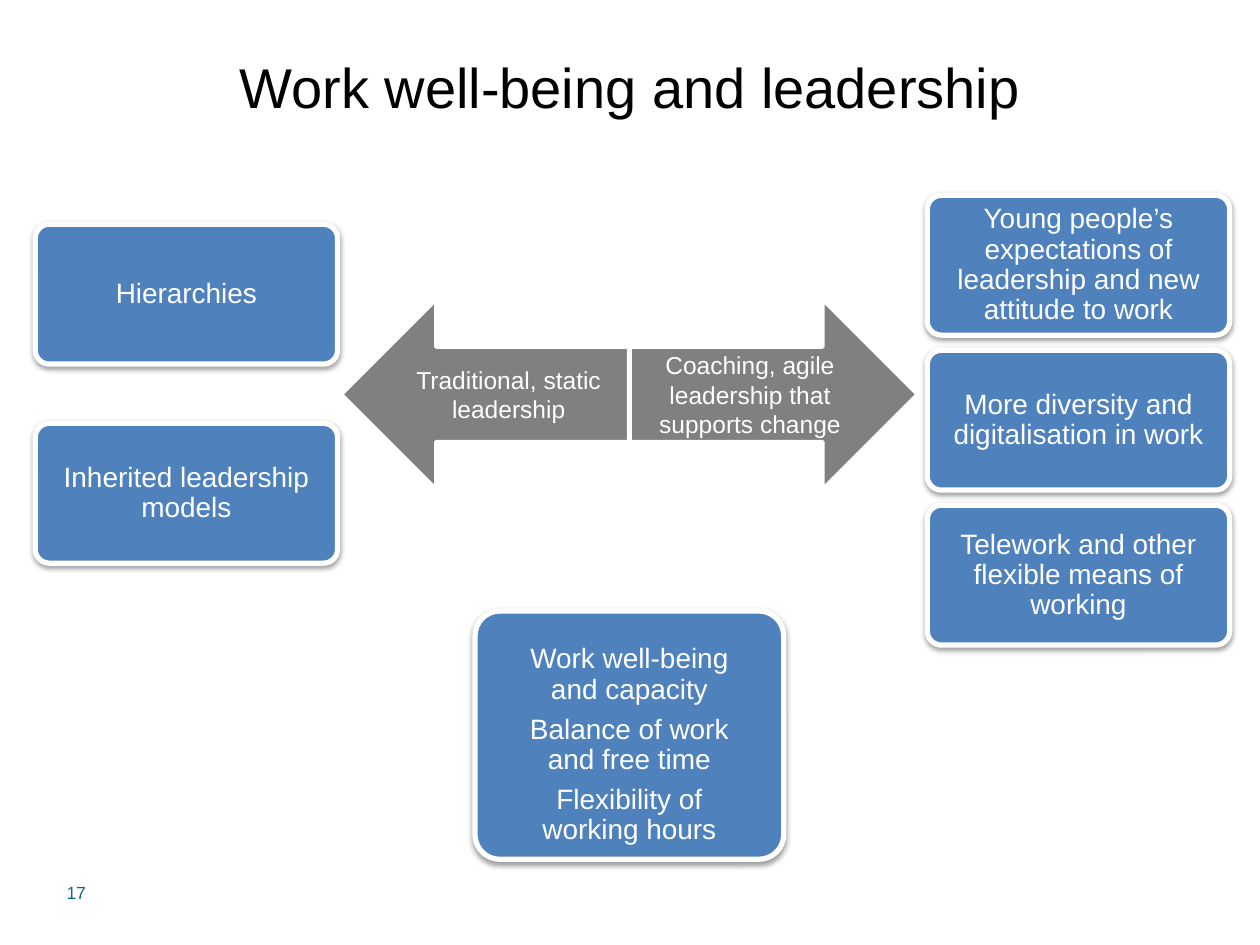
from lxml.etree import SubElement
from pptx import Presentation
from pptx.dml.color import RGBColor
from pptx.enum.shapes import MSO_SHAPE as Shape
from pptx.enum.text import MSO_ANCHOR as Anchor, PP_ALIGN as Align
from pptx.oxml.ns import qn
from pptx.util import Inches, Pt

BLACK = RGBColor(0x00, 0x00, 0x00)
WHITE = RGBColor(0xFF, 0xFF, 0xFF)
BLUE = RGBColor(0x4F, 0x81, 0xBD)
GRAY = RGBColor(0x80, 0x80, 0x80)
TEAL = RGBColor(0x07, 0x6E, 0x75)

CARD_SIZE = (2.4, 1.11)
LEFT_CARDS = ["Hierarchies", "Inherited leadership models"]
RIGHT_CARDS = [
    "Young people’s expectations of leadership and new attitude to work",
    "More diversity and digitalisation in work",
    "Telework and other flexible means of working",
]
OUTCOMES = [
    "Work well-being\vand capacity",
    "Balance of work\vand free time",
    "Flexibility of\vworking hours",
]


class SlideBuilder:
    font_name = "Arial"

    def __init__(self, slide):
        self.slide = slide

    def set_text(self, shape, paragraphs, size, color, align=Align.CENTER,
                 anchor=Anchor.MIDDLE, line_spacing=None, gap=0):
        frame = shape.text_frame
        frame.word_wrap = True
        frame.vertical_anchor = anchor
        frame.text = "\n".join(paragraphs)
        for index, paragraph in enumerate(frame.paragraphs):
            paragraph.alignment = align
            if line_spacing:
                paragraph.line_spacing = line_spacing
            if index:
                paragraph.space_before = Pt(gap)
            paragraph.font.name = self.font_name
            paragraph.font.size = Pt(size)
            paragraph.font.color.rgb = color

    def text(self, left, top, width, height, content, size, color, **style):
        box = self.slide.shapes.add_textbox(
            Inches(left), Inches(top), Inches(width), Inches(height))
        self.set_text(box, [content], size, color, **style)

    def block(self, kind, left, top, width, height, fill, line_width):
        shape = self.slide.shapes.add_shape(
            kind, Inches(left), Inches(top), Inches(width), Inches(height))
        shape.shadow.inherit = False
        shape.fill.solid()
        shape.fill.fore_color.rgb = fill
        shape.line.color.rgb = WHITE
        shape.line.width = Pt(line_width)
        return shape

    def drop_shadow(self, shape):
        effects = shape._element.spPr.find(qn("a:effectLst"))
        shadow = SubElement(
            effects, qn("a:outerShdw"), blurRad=str(Pt(3.1)), dist=str(Pt(1.6)),
            dir="5400000", rotWithShape="0")
        color = SubElement(shadow, qn("a:srgbClr"), val=str(BLACK))
        SubElement(color, qn("a:alpha"), val="38000")

    def card(self, left, top, width, height, paragraphs, top_inset=0.04):
        shape = self.block(Shape.ROUNDED_RECTANGLE, left, top, width, height, BLUE, 3)
        shape.adjustments[0] = 0.1
        self.drop_shadow(shape)
        frame = shape.text_frame
        frame.margin_left = frame.margin_right = Inches(0.06)
        frame.margin_top, frame.margin_bottom = Inches(top_inset), Inches(0.04)
        self.set_text(shape, paragraphs, 16, WHITE, line_spacing=0.9, gap=5.6)

    def card_column(self, left, top, pitch, labels):
        for row, label in enumerate(labels):
            self.card(left, top + row * pitch, *CARD_SIZE, [label])

    def arrow(self, kind, left, label):
        shape = self.block(kind, left, 2.38, 2.28, 1.5, GRAY, 2)
        self.set_text(shape, [label], 14, WHITE)


def main():
    presentation = Presentation()
    presentation.slide_width, presentation.slide_height = Inches(10), Inches(7.5)
    builder = SlideBuilder(presentation.slides.add_slide(presentation.slide_layouts[6]))

    builder.text(0.5, 0.06, 9, 1.25, "Work well-being and leadership", 32, BLACK)
    builder.text(0.43, 6.95, 2.33, 0.4, "17", 10, TEAL,
                 align=Align.LEFT, anchor=Anchor.TOP)
    builder.card_column(0.28, 1.78, 1.58, LEFT_CARDS)
    builder.card_column(7.36, 1.55, 1.23, RIGHT_CARDS)
    builder.card(3.77, 4.85, 2.45, 1.97, OUTCOMES, top_inset=0.2)
    builder.arrow(Shape.LEFT_ARROW, 2.71, "Traditional, static leadership")
    builder.arrow(Shape.RIGHT_ARROW, 5, "Coaching, agile leadership that supports change")

    presentation.save("out.pptx")


if __name__ == "__main__":
    main()
